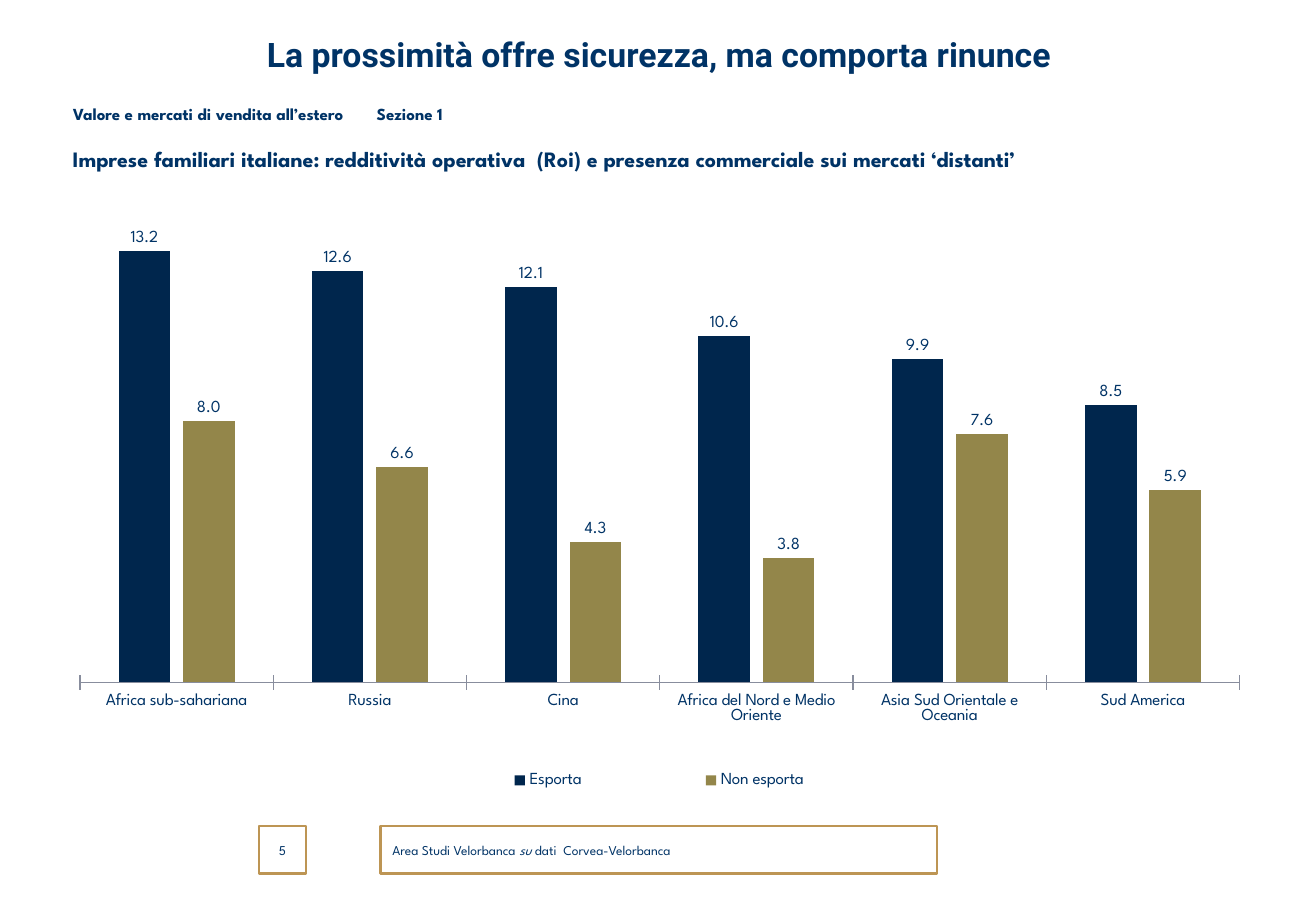
"""Build the slide on returns and distant markets for Italian family firms."""
import lxml.etree
import pptx
import pptx.chart.data
import pptx.dml.color
import pptx.enum.chart
import pptx.enum.shapes
import pptx.enum.text
import pptx.oxml
import pptx.oxml.ns
import pptx.util

INCH, PT = pptx.util.Inches, pptx.util.Pt
ANCHOR, ALIGN = pptx.enum.text.MSO_ANCHOR, pptx.enum.text.PP_ALIGN
FACE, NAVY, GOLD = "League Spartan", "003366", "BD9554"
LEFT, WIDE = 0.5, 9.85


def tint(code):
    return pptx.dml.color.RGBColor.from_string(code)


def style(font, size, face=FACE, bold=False):
    font.name, font.size, font.bold = face, PT(size), bold
    font.color.rgb = tint(NAVY)


deck = pptx.Presentation()
deck.slide_width, deck.slide_height = INCH(10.83), INCH(7.5)
slide = deck.slides.add_slide(deck.slide_layouts[1])
title, body = slide.placeholders
lead = slide.shapes.add_textbox(0, 0, 0, 0)

heads = [
    (title, 0.23, 0.52, ANCHOR.TOP, 0.05, 20, "Roboto",
     "La prossimità offre sicurezza, ma comporta rinunce"),
    (body, 0.78, 0.31, ANCHOR.MIDDLE, 0.09, 10, FACE,
     "Valore e mercati di vendita all’estero\tSezione 1"),
    (lead, 1.15, 0.45, ANCHOR.TOP, 0.05, 13, FACE,
     "Imprese familiari italiane: redditività operativa  (Roi) e presenza "
     "commerciale sui mercati ‘distanti’"),
]
for box, top, high, anchor, pad, size, face, text in heads:
    box.left, box.top = INCH(LEFT), INCH(top)
    box.width, box.height = INCH(WIDE), INCH(high)
    frame = box.text_frame
    frame.word_wrap = True
    frame.auto_size = pptx.enum.text.MSO_AUTO_SIZE.NONE
    frame.vertical_anchor = anchor
    frame.margin_top = frame.margin_bottom = INCH(pad)
    line = frame.paragraphs[0]
    line.alignment = ALIGN.CENTER if box is title else ALIGN.LEFT
    line.space_before = PT(0)
    if box is body:
        props = line._p.get_or_add_pPr()
        props.set("marL", "0")
        props.set("indent", "0")
        lxml.etree.SubElement(props, pptx.oxml.ns.qn("a:buNone"))
        tabs = lxml.etree.SubElement(props, pptx.oxml.ns.qn("a:tabLst"))
        lxml.etree.SubElement(tabs, pptx.oxml.ns.qn("a:tab"),
                              pos=str(INCH(2.91)), algn="l")
    run = line.add_run()
    run.text = text
    style(run.font, size, face, True)

data = pptx.chart.data.CategoryChartData(number_format="0.0")
data.categories = ["Africa sub-sahariana", "Russia", "Cina",
                   "Africa del Nord e Medio Oriente",
                   "Asia Sud Orientale e Oceania", "Sud America"]
data.add_series("Esporta", [13.2, 12.6, 12.1, 10.6, 9.9, 8.5])
data.add_series("Non esporta", [8.0, 6.6, 4.3, 3.8, 7.6, 5.9])
chart = slide.shapes.add_chart(
    pptx.enum.chart.XL_CHART_TYPE.COLUMN_CLUSTERED,
    INCH(LEFT), INCH(1.58), INCH(WIDE), INCH(5.1), data).chart
chart.has_title = False
style(chart.font, 10)

plot = chart.plots[0]
plot.vary_by_categories = False
plot.gap_width, plot.overlap = 150, -25
for bars, code in zip(plot.series, ["00264D", "93864A"]):
    bars.format.fill.solid()
    bars.format.fill.fore_color.rgb = tint(code)
    tags = bars.data_labels
    tags.show_value = True
    tags.number_format, tags.number_format_is_linked = "0.0", False
    tags.position = pptx.enum.chart.XL_LABEL_POSITION.OUTSIDE_END
    style(tags.font, 10)

scale = chart.value_axis
scale.minimum_scale, scale.maximum_scale = 0, 14
scale.has_major_gridlines = False
scale.visible = False
base = chart.category_axis
base.major_tick_mark = pptx.enum.chart.XL_TICK_MARK.CROSS
base.format.line.color.rgb = tint("888D9D")
base.format.line.width = PT(0.75)
style(base.tick_labels.font, 10)

chart.has_legend = True
key = chart.legend
key.position = pptx.enum.chart.XL_LEGEND_POSITION.BOTTOM
key.include_in_layout = False
style(key.font, 10)

area = chart._chartSpace.chart.plotArea
for old in area.findall(pptx.oxml.ns.qn("c:layout")):
    area.remove(old)
places = [
    (area, 0, '<c:layoutTarget val="inner"/>', (0.016, 0.054, 0.969, 0.738)),
    (key._element, 1, "", (0.28, 0.92, 0.44, 0.06)),
]
for node, spot, aim, (x, y, w, h) in places:
    node.insert(spot, pptx.oxml.parse_xml(
        f'<c:layout {pptx.oxml.ns.nsdecls("c")}><c:manualLayout>{aim}'
        '<c:xMode val="edge"/><c:yMode val="edge"/>'
        f'<c:x val="{x}"/><c:y val="{y}"/><c:w val="{w}"/><c:h val="{h}"/>'
        '</c:manualLayout></c:layout>'))

notes = [
    (2.13, 0.39, ALIGN.CENTER, [("5", False)]),
    (3.13, 4.58, ALIGN.LEFT, [("Area Studi Velorbanca ", False), ("su ", True),
                              ("dati  Corvea-Velorbanca", False)]),
]
for left, wide, align, parts in notes:
    box = slide.shapes.add_shape(pptx.enum.shapes.MSO_SHAPE.RECTANGLE,
                                 INCH(left), INCH(6.8), INCH(wide), INCH(0.39))
    box.shadow.inherit = False
    box.fill.background()
    box.line.color.rgb = tint(GOLD)
    box.line.width = PT(1.5)
    frame = box.text_frame
    frame.word_wrap = True
    frame.vertical_anchor = ANCHOR.MIDDLE
    line = frame.paragraphs[0]
    line.alignment = align
    for text, slant in parts:
        run = line.add_run()
        run.text = text
        style(run.font, 8)
        run.font.italic = slant

deck.save("out.pptx")
